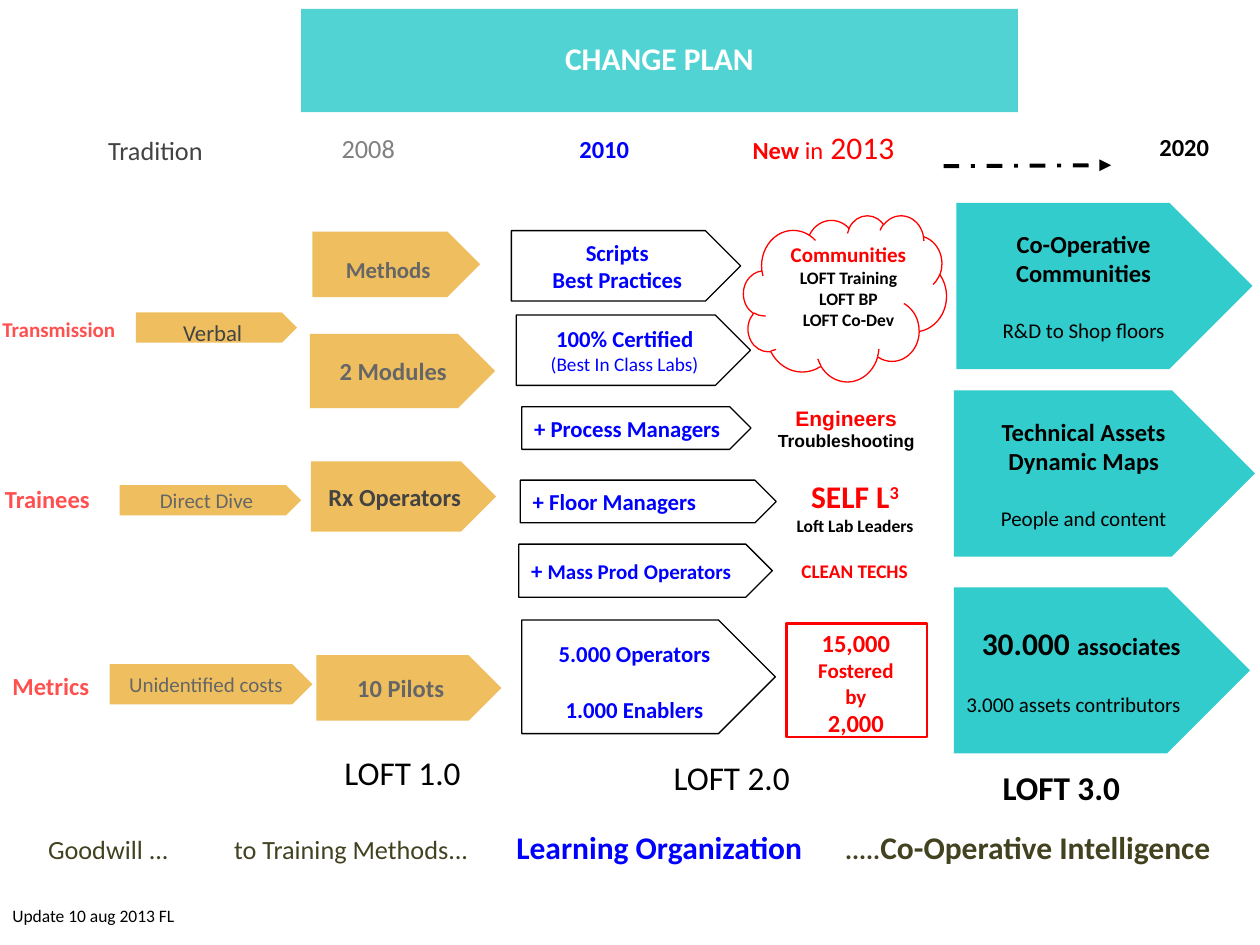
from pptx import Presentation
from pptx.dml.color import RGBColor
from pptx.enum.dml import MSO_LINE
from pptx.enum.shapes import MSO_CONNECTOR, MSO_SHAPE
from pptx.enum.text import MSO_ANCHOR, PP_ALIGN
from pptx.oxml.ns import qn
from pptx.util import Cm, Pt
from lxml.etree import SubElement

BLACK, WHITE, RED, BLUE = "000000", "FFFFFF", "FF0000", "0000FF"
CORAL, OCHRE, TEAL = "FF5050", "EFBF5F", "33CCCC"
GREY, DARK, OLIVE = "666666", "434343", "424120"

# A run is (text, size, colour, style): "b" bold, "^" superscript.
# A box is (left, top, width, height), paragraphs, options.
TITLE = ((6.07, 0.18, 14.45, 2.08), [[("CHANGE PLAN", 18, WHITE, "b")]], {"drop": -0.05})

OCHRE_ARROWS = [
    ((6.3, 4.67, 3.38, 1.32), [[("Methods", 13, GREY, "b")]], {"drop": 0.1}),
    ((2.74, 6.3, 3.25, 0.61), [[("Verbal", 13, DARK, "")]], {"drop": 0.1}),
    ((6.25, 6.73, 3.73, 1.5), [[("2 Modules", 14, GREY, "b")]], {}),
    ((2.41, 9.78, 3.66, 0.61), [[("Direct Dive", 12, GREY, "")]], {}),
    ((6.27, 9.3, 3.73, 1.42), [[("Rx Operators", 14, DARK, "b")]], {}),
    ((2.21, 13.39, 4.09, 0.81), [[("Unidentified costs", 12, GREY, "")]], {}),
    ((6.38, 13.21, 3.73, 1.32), [[("10 Pilots", 14, GREY, "b")]], {}),
]
WHITE_ARROWS = [
    ((10.31, 4.65, 4.62, 1.42),
     [[("Scripts", 13, BLUE, "b")], [("Best Practices", 13, BLUE, "b")]], {}),
    ((10.41, 6.35, 4.72, 1.42),
     [[("100% Certified", 13, BLUE, "b")], [("(Best In Class Labs)", 11, BLUE, "")]], {}),
    ((10.52, 8.2, 4.62, 0.86), [[("+ Process Managers", 13, BLUE, "b")]], {"aligns": "l"}),
    ((10.49, 9.68, 5.16, 0.86), [[("+ Floor Managers", 13, BLUE, "b")]], {"aligns": "l"}),
    ((10.46, 10.97, 5.11, 1.07),
     [[("+ ", 13, BLUE, "b"), ("Mass Prod", 12, BLUE, "b"), (" ", 13, BLUE, "b"),
       ("Operators", 12, BLUE, "b")]], {"aligns": "l"}),
    ((10.52, 12.5, 5.11, 2.29),
     [[("5.000 Operators", 13, BLUE, "b")], [("1.000 Enablers", 13, BLUE, "b")]],
     {"drop": 0.09, "gap": 16}),
]
TEAL_ARROWS = [
    ((19.28, 4.09, 5.97, 3.35),
     [[("Co-Operative", 14, BLACK, "b")], [("Communities", 14, BLACK, "b")],
      [("R&D to Shop floors", 12, BLACK, "")]], {"gap": 17}),
    ((19.23, 7.87, 6.07, 3.35),
     [[("Technical Assets", 14, BLACK, "b")], [("Dynamic Maps", 14, BLACK, "b")],
      [("People and content", 12, BLACK, "")]], {"gap": 17}),
    ((19.23, 11.84, 5.97, 3.35),
     [[("30.000 ", 18, BLACK, "b"), ("associates", 14, BLACK, "b")],
      [("3.000 assets contributors", 12, BLACK, "")]], {"gap": 17, "aligns": "cl"}),
]
LABELS = [
    # time line
    ((0.53, 2.57, 5.21, 0.89), [[("Tradition", 15, DARK, "")]], {}),
    ((6.65, 2.54, 1.55, 0.86), [[("2008", 15, "808080", "")]], {"side": 0}),
    ((11.43, 2.57, 1.88, 1.04), [[("2010", 14, BLUE, "b")]], {"aligns": "l"}),
    ((14.48, 2.46, 4.24, 1.32),
     [[("New", 14, RED, "b"), (" in", 14, RED, ""), (" 2013", 18, RED, "")]], {}),
    ((22.73, 2.54, 2.29, 1.04), [[("2020", 14, BLACK, "b")]], {}),
    # row names
    ((0.05, 6.25, 2.6, 0.97), [[("Transmission", 12, CORAL, "b")]], {"aligns": "l", "side": 0}),
    ((0.1, 9.63, 2.6, 0.81), [[("Trainees", 14, CORAL, "b")]], {"aligns": "l", "side": 0}),
    ((0.25, 13.39, 2.03, 1.07), [[("Metrics", 14, CORAL, "b")]], {"aligns": "l", "side": 0}),
    # new in 2013
    ((15.34, 4.62, 3.53, 2.34),
     [[("Communities", 12, RED, "b")], [("LOFT Training", 10, BLACK, "b")],
      [("LOFT BP", 10, BLACK, "b")], [("LOFT Co-Dev", 10, BLACK, "b")]], {"top": 0.25}),
    ((14.94, 7.92, 4.24, 1.32),
     [[("Engineers", 12, RED, "b")], [("Troubleshooting", 10, BLACK, "b")]],
     {"top": 0.25, "font": "Arial"}),
    ((15.37, 9.37, 3.73, 1.5),
     [[("SELF L", 18, RED, "b"), ("3", 18, RED, "b^")],
      [("Loft Lab Leaders", 10, BLACK, "b")]], {"top": 0.25}),
    ((15.11, 11.05, 4.24, 1.07), [[("CLEAN TECHS", 11, RED, "b")]], {"top": 0.25}),
    ((16, 12.42, 2.51, 2.46),
     [[("15,000", 14, RED, "b")], [("Fostered", 12, RED, "b")], [("by", 12, RED, "b")],
      [("2,000", 14, RED, "b")]], {"top": 0.25}),
    # versions
    ((5.64, 15.04, 4.95, 1.07), [[("LOFT 1.0", 19, BLACK, "")]], {}),
    ((12.17, 15.14, 5.16, 1.04), [[("LOFT 2.0", 19, BLACK, "")]], {}),
    ((18.92, 15.34, 4.95, 1.04), [[("LOFT 3.0", 19, BLACK, "b")]], {}),
    # bottom line and date
    ((0, 16.56, 25.4, 0.89),
     [[("Goodwill ...\tto Training Methods...\t", 15, OLIVE, ""),
       ("Learning Organization\t", 18, BLUE, "b"), (".....", 15, OLIVE, "b"),
       ("Co-Operative Intelligence", 18, OLIVE, "b")]],
     {"aligns": "l", "side": 0.97, "tabs": (3.75, 9.44, 16.07)}),
    ((0, 18.11, 5, 0.86), [[("Update 10 aug 2013 FL", 10, BLACK, "")]], {"aligns": "l"}),
]
OUTLINES = [
    (MSO_SHAPE.CLOUD, (14.99, 4.34, 4.09, 3.35), 0.75),
    (MSO_SHAPE.RECTANGLE, (15.85, 12.57, 2.84, 2.29), 1.5),
]
ALIGNS = {"l": PP_ALIGN.LEFT, "c": PP_ALIGN.CENTER}


def rgb(color):
    return RGBColor.from_string(color)


def write(s, paras, aligns="c", gap=0, drop=0, side=0.25, top=0.13, font="Calibri", tabs=()):
    """Fill s with paras; drop lowers centred text, gap goes above the last paragraph."""
    tf = s.text_frame
    tf.word_wrap = True
    tf.margin_left, tf.margin_right = Cm(side), Cm(min(side, 0.25))
    tf.margin_top = Cm(top + 2 * max(drop, 0))
    tf.margin_bottom = Cm(top + 2 * max(-drop, 0))
    for i, runs in enumerate(paras):
        p = tf.add_paragraph() if i else tf.paragraphs[0]
        if tabs:
            tab_list = SubElement(p._p.get_or_add_pPr(), qn("a:tabLst"))
            for pos in tabs:
                SubElement(tab_list, qn("a:tab"), pos=str(Cm(pos)), algn="l")
        p.alignment = ALIGNS[aligns[min(i, len(aligns) - 1)]]
        if gap and i == len(paras) - 1:
            p.space_before = Pt(gap)
        for text, size, color, style in runs:
            r = p.add_run()
            r.text = text
            r.font.name, r.font.size = font, Pt(size)
            r.font.bold = "b" in style
            r.font.color.rgb = rgb(color)
            if "^" in style:
                r.font._element.set("baseline", "30000")


def add_shape(shapes, kind, box, fill=None, line=None, width=0.75):
    s = shapes.add_shape(kind, *map(Cm, box))
    s.shadow.inherit = False
    if fill:
        s.fill.solid()
        s.fill.fore_color.rgb = rgb(fill)
    else:
        s.fill.background()
    if line:
        s.line.color.rgb = rgb(line)
        s.line.width = Pt(width)
    else:
        s.line.fill.background()
    s.text_frame.vertical_anchor = MSO_ANCHOR.MIDDLE
    return s


def add_time_arrow(shapes):
    c = shapes.add_connector(MSO_CONNECTOR.STRAIGHT, Cm(19.02), Cm(3.35), Cm(22.4), Cm(3.33))
    c.line.color.rgb = rgb(BLACK)
    c.line.width = Pt(2.25)
    c.line.dash_style = MSO_LINE.DASH_DOT
    SubElement(c.line._get_or_add_ln(), qn("a:tailEnd"), type="triangle")
    SubElement(c._element.spPr, qn("a:effectLst"))


def main():
    prs = Presentation()
    prs.slide_width, prs.slide_height = Cm(25.4), Cm(19.05)
    shapes = prs.slides.add_slide(prs.slide_layouts[6]).shapes

    for kind, box, width in OUTLINES:
        add_shape(shapes, kind, box, line=RED, width=width)

    box, paras, options = TITLE
    banner = add_shape(shapes, MSO_SHAPE.RECTANGLE, box, TEAL)
    fill_color = banner._element.spPr.find(qn("a:solidFill"))[0]
    SubElement(fill_color, qn("a:alpha"), val="85000")
    write(banner, paras, **options)

    for arrows, fill, line in ((OCHRE_ARROWS, OCHRE, None), (WHITE_ARROWS, WHITE, BLACK),
                               (TEAL_ARROWS, TEAL, None)):
        for box, paras, options in arrows:
            write(add_shape(shapes, MSO_SHAPE.PENTAGON, box, fill, line), paras, **options)

    for box, paras, options in LABELS:
        write(shapes.add_textbox(*map(Cm, box)), paras, **options)
    add_time_arrow(shapes)
    prs.save("out.pptx")


if __name__ == "__main__":
    main()
